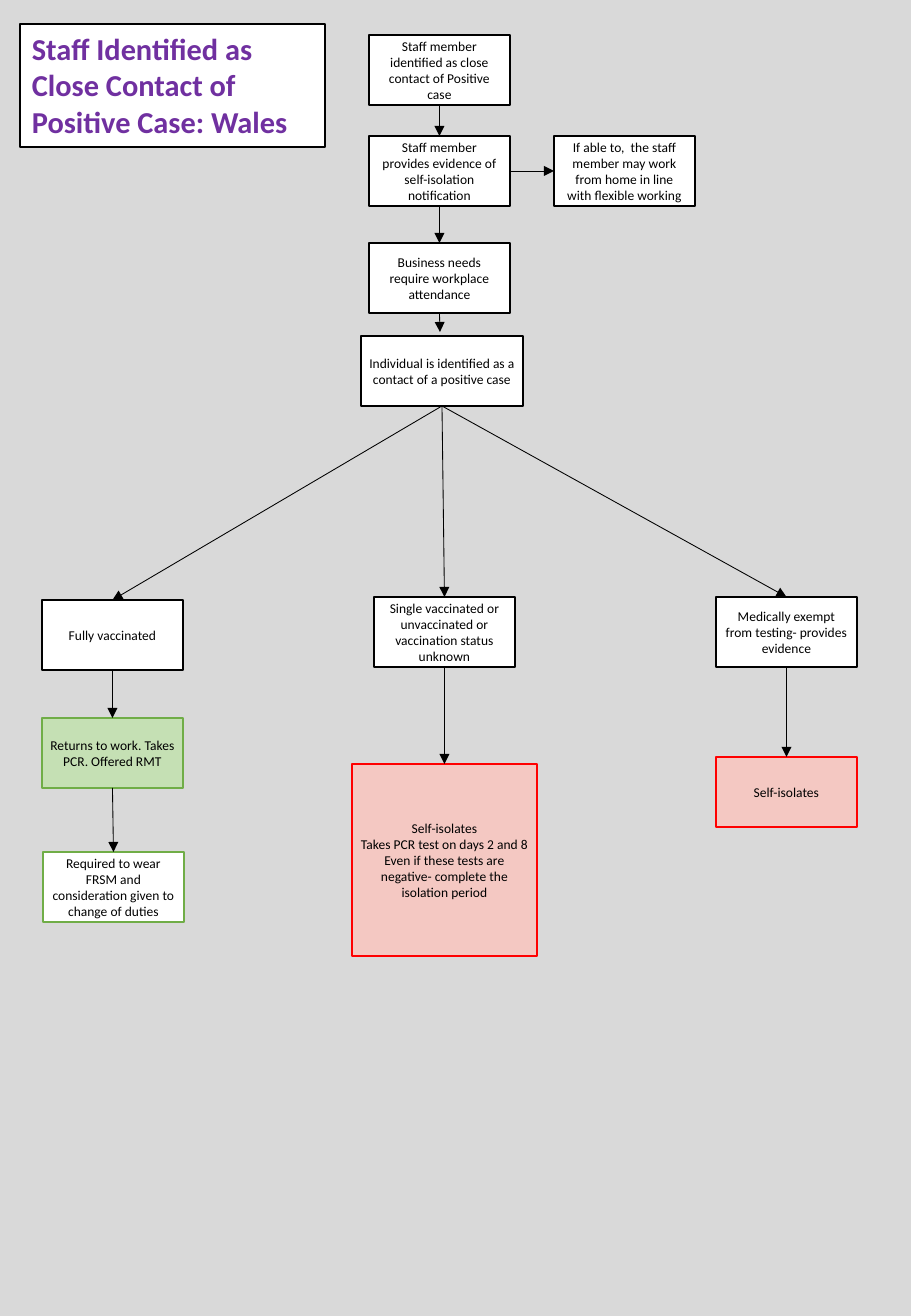
from lxml import etree
from pptx import Presentation
from pptx.dml.color import RGBColor
from pptx.enum.shapes import MSO_CONNECTOR, MSO_SHAPE
from pptx.enum.text import MSO_ANCHOR, PP_ALIGN
from pptx.oxml.ns import qn
from pptx.util import Pt

RECTANGLE = MSO_SHAPE.RECTANGLE
STRAIGHT = MSO_CONNECTOR.STRAIGHT
TOP_ANCHOR, MIDDLE_ANCHOR = MSO_ANCHOR.TOP, MSO_ANCHOR.MIDDLE
LEFT_ALIGN, CENTER_ALIGN = PP_ALIGN.LEFT, PP_ALIGN.CENTER

BLACK = RGBColor(0x00, 0x00, 0x00)
WHITE = RGBColor(0xFF, 0xFF, 0xFF)
GREY = RGBColor(0xD9, 0xD9, 0xD9)
PURPLE = RGBColor(0x70, 0x30, 0xA0)
GREEN = RGBColor(0x70, 0xAD, 0x47)
PALE_GREEN = RGBColor(0xC5, 0xE0, 0xB4)
RED = RGBColor(0xFF, 0x00, 0x00)
PALE_RED = RGBColor(0xF4, 0xC8, 0xC2)

EMU_PER_PX = 7526
SLIDE_WIDTH, SLIDE_HEIGHT = 911, 1316
BOX_WIDTH, BOX_HEIGHT = 141, 70
TOP, LEFT, BOTTOM, RIGHT = range(4)


def px(length):
    return length * EMU_PER_PX


class FlowChart:
    font = "Calibri"

    def __init__(self, slide):
        self.slide = slide
        slide.background.fill.solid()
        slide.background.fill.fore_color.rgb = GREY

    def rectangle(self, left, top, width, height, fill, line, line_width):
        shape = self.slide.shapes.add_shape(
            RECTANGLE, px(left), px(top), px(width), px(height))
        shape.shadow.inherit = False
        shape.fill.solid()
        shape.fill.fore_color.rgb = fill
        shape.line.color.rgb = line
        shape.line.width = Pt(line_width)
        return shape

    def add_text(self, shape, lines, size, color, alignment, anchor, bold=False):
        frame = shape.text_frame
        frame.word_wrap = True
        frame.vertical_anchor = anchor
        for index, line in enumerate(lines):
            paragraph = frame.add_paragraph() if index else frame.paragraphs[0]
            paragraph.alignment = alignment
            run = paragraph.add_run()
            run.text = line
            run.font.name = self.font
            run.font.size = Pt(size)
            run.font.bold = bold
            run.font.color.rgb = color

    def title(self, left, top, width, height, text):
        shape = self.rectangle(left, top, width, height, WHITE, BLACK, 0.75)
        self.add_text(shape, [text], 18, PURPLE, LEFT_ALIGN, TOP_ANCHOR, bold=True)

    def step(self, left, top, *lines, width=BOX_WIDTH, height=BOX_HEIGHT,
             fill=WHITE, line=BLACK):
        shape = self.rectangle(left, top, width, height, fill, line, 1)
        frame = shape.text_frame
        frame.margin_left = frame.margin_right = px(8)
        frame.margin_top = frame.margin_bottom = px(4)
        self.add_text(shape, lines, 8, BLACK, CENTER_ALIGN, MIDDLE_ANCHOR)
        return shape

    def arrow(self, start, end, start_side=BOTTOM, end_side=TOP, end_point=None):
        """Join two steps, or stop at end_point in px when it is given."""
        x, y = end_point or (0, 0)
        connector = self.slide.shapes.add_connector(STRAIGHT, 0, 0, px(x), px(y))
        connector.begin_connect(start, start_side)
        if end_point is None:
            connector.end_connect(end, end_side)
        connector.line.color.rgb = BLACK
        connector.line.width = Pt(0.5)
        properties = connector._element.spPr
        etree.SubElement(properties.find(qn("a:ln")), qn("a:tailEnd"), type="triangle")
        etree.SubElement(properties, qn("a:effectLst"))


def main():
    presentation = Presentation()
    presentation.slide_width = px(SLIDE_WIDTH)
    presentation.slide_height = px(SLIDE_HEIGHT)
    chart = FlowChart(presentation.slides.add_slide(presentation.slide_layouts[6]))

    chart.title(20, 24, 305, 123,
                "Staff Identified as Close Contact of Positive Case: Wales")

    contact = chart.step(
        369, 35, "Staff member identified as close contact of Positive case")
    evidence = chart.step(
        369, 136, "Staff member provides evidence of self-isolation notification")
    home = chart.step(
        554, 136,
        "If able to,  the staff member may work from home in line with flexible working")
    business = chart.step(369, 243, "Business needs require workplace attendance")
    individual = chart.step(
        361, 336, "Individual is identified as a contact of a positive case", width=162)

    vaccinated = chart.step(42, 600, "Fully vaccinated")
    returns = chart.step(42, 718, "Returns to work. Takes PCR. Offered RMT",
                         fill=PALE_GREEN, line=GREEN)
    mask = chart.step(
        43, 852, "Required to wear FRSM and consideration given to change of duties",
        line=GREEN)

    unvaccinated = chart.step(
        374, 597, "Single vaccinated or unvaccinated or vaccination status unknown")
    isolates_tested = chart.step(
        352, 764, "Self-isolates", "Takes PCR test on days 2 and 8",
        "Even if these tests are negative- complete the isolation period",
        width=185, height=192, fill=PALE_RED, line=RED)

    exempt = chart.step(716, 597, "Medically exempt from testing- provides evidence")
    isolates = chart.step(716, 757, "Self-isolates", fill=PALE_RED, line=RED)

    for start, end in [
        (contact, evidence), (evidence, business),
        (individual, vaccinated), (individual, unvaccinated), (individual, exempt),
        (vaccinated, returns), (returns, mask),
        (unvaccinated, isolates_tested), (exempt, isolates),
    ]:
        chart.arrow(start, end)
    chart.arrow(evidence, home, RIGHT, LEFT)
    chart.arrow(business, None, end_point=(440, 332))

    presentation.save("out.pptx")


if __name__ == "__main__":
    main()
